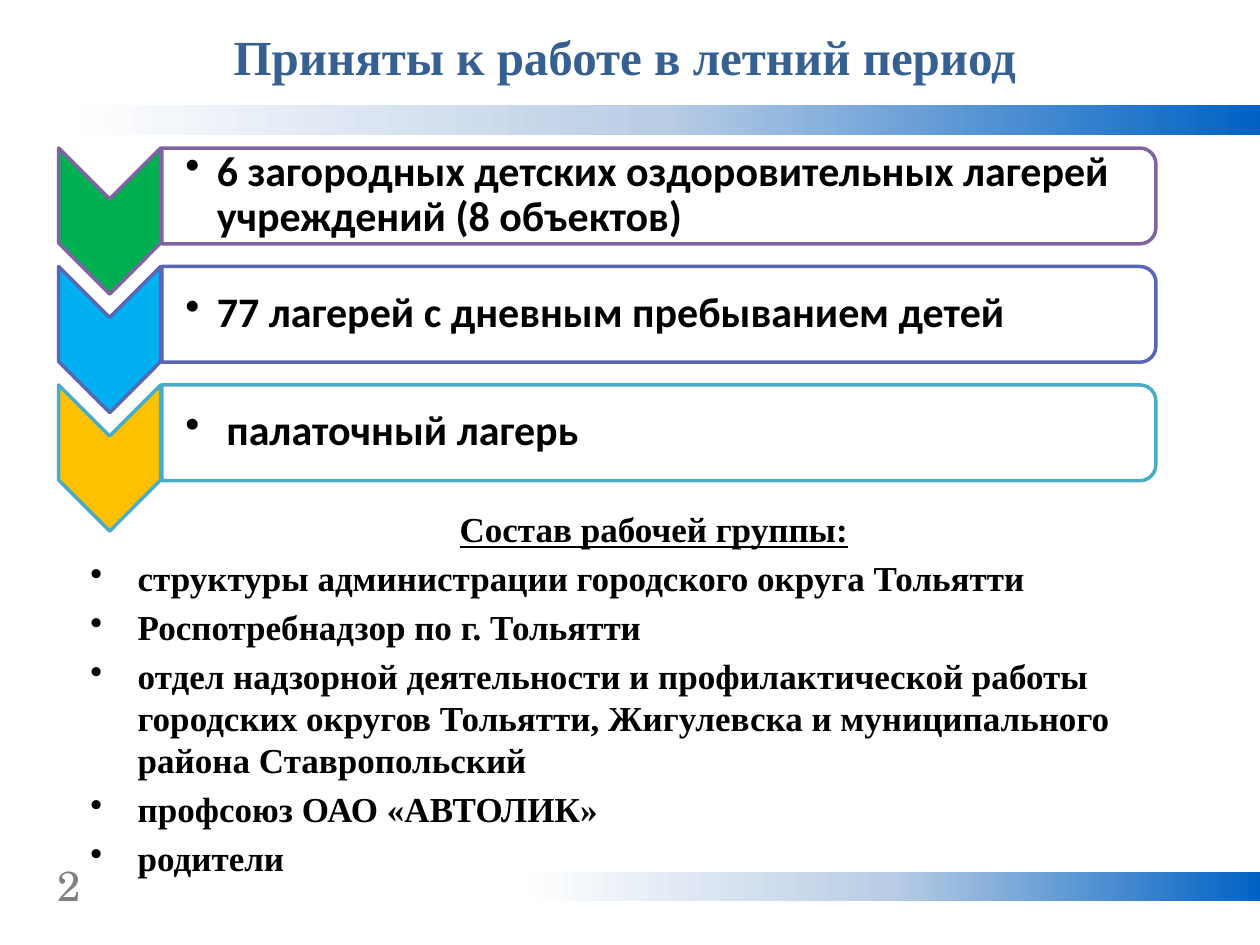
from lxml import etree
from pptx import Presentation
from pptx.dml.color import RGBColor
from pptx.enum.shapes import MSO_SHAPE
from pptx.enum.text import MSO_ANCHOR, MSO_AUTO_SIZE, PP_ALIGN
from pptx.oxml.ns import qn
from pptx.util import Pt

RECTANGLE = MSO_SHAPE.RECTANGLE
CHEVRON = MSO_SHAPE.CHEVRON
ROUNDED_TOP = MSO_SHAPE.ROUND_2_SAME_RECTANGLE
MIDDLE = MSO_ANCHOR.MIDDLE
CENTER = PP_ALIGN.CENTER

BLACK = RGBColor(0x00, 0x00, 0x00)
WHITE = RGBColor(0xFF, 0xFF, 0xFF)
GRAY = RGBColor(0x80, 0x80, 0x80)
TITLE_BLUE = RGBColor(0x37, 0x60, 0x92)
BAND_STOPS = [
    (0, RGBColor(0x00, 0x62, 0xC4)),
    (50, RGBColor(0xB9, 0xCD, 0xE5)),
    (100, WHITE),
]
SERIF = "Times New Roman"

# Text, chevron fill, outline
CAMPS = [
    ("6 загородных детских оздоровительных лагерей учреждений (8 объектов)",
     RGBColor(0x00, 0xB0, 0x50), RGBColor(0x80, 0x64, 0xA2)),
    ("77 лагерей с дневным пребыванием детей",
     RGBColor(0x00, 0xB0, 0xF0), RGBColor(0x57, 0x67, 0xB4)),
    (" палаточный лагерь",
     RGBColor(0xFF, 0xC0, 0x00), RGBColor(0x4B, 0xAC, 0xC6)),
]
CAMP_TOP = 84.6
CAMP_PITCH = 67.7

GROUP_HEADING = "Состав рабочей группы:"
GROUP_MEMBERS = [
    "структуры администрации городского округа Тольятти",
    "Роспотребнадзор по г. Тольятти",
    "отдел надзорной деятельности и профилактической работы городских округов "
    "Тольятти, Жигулевска и муниципального района Ставропольский",
    "профсоюз ОАО «АВТОЛИК»",
    "родители",
]


def style(para, size, name, color, bold=True):
    font = para.font
    font.size, font.name, font.bold = Pt(size), name, bold
    font.color.rgb = color


def hang(para, indent, bullet=True):
    """Give the paragraph a hanging indent and, if wanted, a bullet."""
    properties = para._p.get_or_add_pPr()
    properties.set("marL", str(Pt(indent)))
    properties.set("indent", str(-Pt(indent)))
    if bullet:
        mark = etree.Element(qn("a:buChar"), char="•")
        default = properties.find(qn("a:defRPr"))
        if default is None:
            properties.append(mark)
        else:
            default.addprevious(mark)


def add_text(page, left, top, width, height):
    box = page.shapes.add_textbox(Pt(left), Pt(top), Pt(width), Pt(height))
    box.text_frame.word_wrap = True
    return box.text_frame


def add_band(page, left, top, width, height):
    """A bar that fades from blue at the right to white at the left."""
    band = page.shapes.add_shape(RECTANGLE, Pt(left), Pt(top), Pt(width), Pt(height))
    band.shadow.inherit = False
    band.line.fill.background()
    band.fill.gradient()
    band.fill.gradient_angle = 180
    stops = band._element.spPr.find(qn("a:gradFill")).find(qn("a:gsLst"))
    for stop in list(stops):
        stops.remove(stop)
    for position, color in BAND_STOPS:
        stop = etree.SubElement(stops, qn("a:gs"), pos=str(position * 1000))
        etree.SubElement(stop, qn("a:srgbClr"), val=str(color))


def add_turned(page, kind, left, top, width, height, fill, outline):
    """A shape turned by 90 degrees that covers the given area."""
    shift = (width - height) / 2
    shape = page.shapes.add_shape(
        kind, Pt(left + shift), Pt(top - shift), Pt(height), Pt(width))
    shape.rotation = 90
    shape.shadow.inherit = False
    shape.fill.solid()
    shape.fill.fore_color.rgb = fill
    shape.line.color.rgb = outline
    shape.line.width = Pt(2)
    return shape


def add_camp(page, top, text, fill, outline):
    chevron = add_turned(page, CHEVRON, 33.5, top, 58.3, 83.5, fill, outline)
    chevron.adjustments[0] = 0.5
    panel = add_turned(page, ROUNDED_TOP, 92.5, top, 568, 54.7, WHITE, outline)
    color = panel._element.spPr.find(qn("a:solidFill"))[0]
    etree.SubElement(color, qn("a:alpha"), val="90000")

    frame = add_text(page, 92.2, top + 2.5, 565.2, 49)
    frame.vertical_anchor = MIDDLE
    frame.margin_left = Pt(13.7)
    frame.margin_top = frame.margin_right = frame.margin_bottom = Pt(1.2)
    para = frame.paragraphs[0]
    para.text = text
    para.line_spacing = 0.9
    style(para, 24, "Calibri", BLACK)
    hang(para, 18)


def add_group_list(page):
    frame = add_text(page, 44.6, 286.6, 658, 183.6)
    for index, text in enumerate([GROUP_HEADING] + GROUP_MEMBERS):
        para = frame.add_paragraph() if index else frame.paragraphs[0]
        para.text = text
        para.space_before = Pt(4)
        style(para, 20, SERIF, BLACK)
        hang(para, 27, bullet=index > 0)
    heading = frame.paragraphs[0]
    heading.alignment = CENTER
    heading.font.underline = True


def set_title(page, text):
    title = page.shapes.title
    title.left, title.top, title.width, title.height = Pt(28), Pt(11.5), Pt(658), Pt(41)
    frame = title.text_frame
    frame.text = text
    frame.auto_size = MSO_AUTO_SIZE.NONE
    frame.vertical_anchor = MIDDLE
    para = frame.paragraphs[0]
    para.alignment = CENTER
    style(para, 28, SERIF, TITLE_BLUE)


def main():
    deck = Presentation()
    deck.slide_width, deck.slide_height = Pt(720), Pt(540)
    page = deck.slides.add_slide(deck.slide_layouts[5])

    # Title and decorative bands
    set_title(page, "Приняты к работе в летний период")
    add_band(page, 36.7, 60.3, 683.3, 17)
    add_band(page, 297.4, 498.2, 422.6, 17)

    # Page number
    number = add_text(page, 26, 487.4, 22.5, 36.7).paragraphs[0]
    number.text = "2"
    style(number, 24, "TeX Gyre Schola", GRAY, bold=False)

    # Camps, one row each
    for row, camp in enumerate(CAMPS):
        add_camp(page, CAMP_TOP + row * CAMP_PITCH, *camp)

    # Working group
    add_group_list(page)
    deck.save("out.pptx")


if __name__ == "__main__":
    main()
